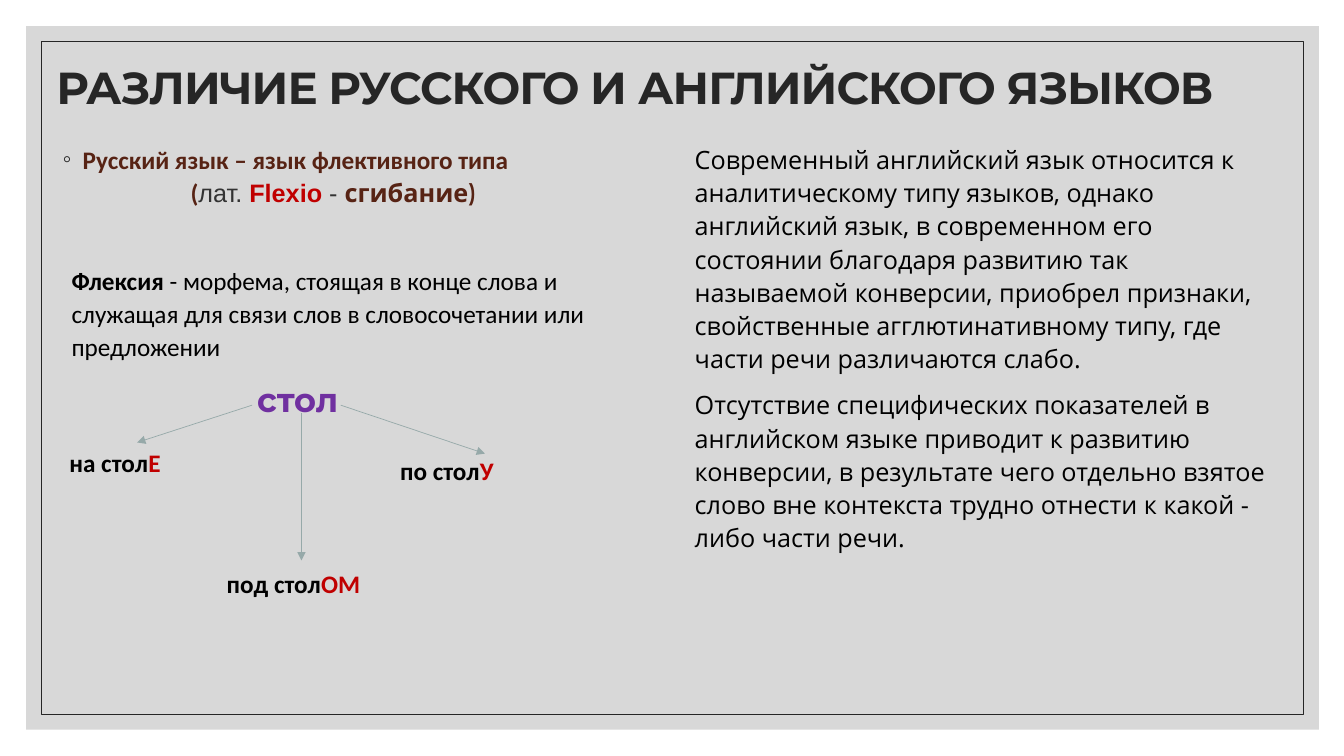
from pptx import Presentation
from pptx.dml.color import RGBColor
from pptx.enum.shapes import MSO_CONNECTOR as CONN, MSO_SHAPE as SHAPE
from pptx.enum.text import MSO_ANCHOR as ANCHOR, MSO_AUTO_SIZE as FIT, PP_ALIGN as ALIGN
from pptx.oxml.ns import qn
from pptx.util import Emu, Pt
from lxml.etree import SubElement

PX = 9144
DARK, BROWN, RED, BLACK, GREY = "262626", "572314", "C00000", "000000", "333333"


def px(*lengths):
    return [Emu(n * PX) for n in lengths]


def rgb(code):
    return RGBColor.from_string(code)


class SlideBuilder:
    """Holds the slide and its text and line style."""

    def __init__(self, prs, size=18, spacing=1.1, accent="96A9A9"):
        self.s = prs.slides.add_slide(prs.slide_layouts[3])
        self.size, self.spacing, self.accent = size, spacing, accent
        self.backdrops = 0

    def backdrop(self, box, fill=None, alpha=100, line=None):
        sp = self.s.shapes.add_shape(SHAPE.RECTANGLE, *px(*box))
        sp.shadow.inherit = False
        if fill:
            sp.fill.solid()
            sp.fill.fore_color.rgb = rgb(fill)
            color = sp.fill._xPr.find(".//" + qn("a:srgbClr"))
            SubElement(color, qn("a:alpha"), val=str(alpha * 1000))
        else:
            sp.fill.background()
        if line:
            sp.line.color.rgb = rgb(line)
            sp.line.width = Pt(0.5)
        else:
            sp.line.fill.background()
        sp._element.getparent().insert(2 + self.backdrops, sp._element)
        self.backdrops += 1

    def placeholder(self, idx, box, anchor=ANCHOR.TOP):
        sp = self.s.placeholders[idx]
        sp.left, sp.top, sp.width, sp.height = px(*box)
        tf = sp.text_frame
        tf.word_wrap, tf.auto_size, tf.vertical_anchor = True, FIT.NONE, anchor
        return tf

    def runs(self, p, runs):
        for text, font, color, bold, *size in runs:
            r = p.add_run()
            r.text = text
            r.font.name, r.font.bold = font, bold
            r.font.size = Pt(size[0] if size else self.size)
            r.font.color.rgb = rgb(color)

    def title(self, text, box):
        p = self.placeholder(0, box, ANCHOR.MIDDLE).paragraphs[0]
        p.alignment, p.line_spacing = ALIGN.LEFT, 0.9
        self.runs(p, [(text, "Montserrat", DARK, True, 32)])
        p.runs[0].font._element.set("spc", "-70")

    def body(self, idx, box, paragraphs):
        tf = self.placeholder(idx, box)
        for i, (before, margin, bullet, runs) in enumerate(paragraphs):
            p = tf.add_paragraph() if i else tf.paragraphs[0]
            p.alignment, p.line_spacing = ALIGN.LEFT, self.spacing
            p.space_before, p.space_after = Pt(before), Pt(0)
            pPr = p._p.get_or_add_pPr()
            pPr.set("marL", str(margin * PX))
            pPr.set("indent", str(-margin * PX if bullet else 0))
            if bullet:
                SubElement(SubElement(pPr, qn("a:buClr")), qn("a:srgbClr"), val=DARK)
                SubElement(pPr, qn("a:buChar"), char=bullet)
            else:
                SubElement(pPr, qn("a:buNone"))
            self.runs(p, runs)

    def label(self, box, runs):
        tf = self.s.shapes.add_textbox(*px(*box)).text_frame
        tf.word_wrap, tf.auto_size = True, FIT.SHAPE_TO_FIT_TEXT
        self.runs(tf.paragraphs[0], runs)

    def arrow(self, start, end):
        c = self.s.shapes.add_connector(CONN.STRAIGHT, *px(*start, *end))
        c.line.color.rgb = rgb(self.accent)
        c.line.width = Pt(0.5)
        SubElement(c.line._get_or_add_ln(), qn("a:tailEnd"), type="triangle")
        SubElement(c._element.spPr, qn("a:effectLst"))


def main():
    prs = Presentation()
    prs.slide_width, prs.slide_height = px(1333, 750)
    b = SlideBuilder(prs)

    b.backdrop((26, 26, 1282, 698), fill="BFBFBF", alpha=60)
    b.backdrop((41, 41, 1252, 668), line=DARK)
    b.title("РАЗЛИЧИЕ РУССКОГО И АНГЛИЙСКОГО ЯЗЫКОВ", (46, 35, 1240, 109))

    b.body(1, (52, 135, 579, 505), [
        (9, 20, "◦", [("Русский язык – язык флективного типа", "Calibri", BROWN, True)]),
        (0, 127, None, [
            ("(", "Calibri", BROWN, True),
            ("лат. ", "Arial", GREY, False),
            ("Flexio ", "Arial", RED, True),
            ("- ", "Arial", GREY, False),
            ("сгибание)", "Cabin", BROWN, True),
        ]),
        (39, 9, None, [
            ("Флексия", "Calibri", BLACK, True),
            (" - морфема, стоящая в конце слова и служащая для связи слов "
             "в словосочетании или предложении", "Calibri", BLACK, False),
        ]),
        (9, 193, None, [("стол", "Montserrat", "7030A0", True, 24)]),
    ])

    english = [
        "Современный английский язык относится к аналитическому типу языков, "
        "однако английский язык, в современном его состоянии благодаря развитию "
        "так называемой конверсии, приобрел признаки, свойственные "
        "агглютинативному типу, где части речи различаются слабо.",
        "Отсутствие специфических показателей в английском языке приводит к "
        "развитию конверсии, в результате чего отдельно взятое слово вне "
        "контекста трудно отнести к какой - либо части речи.",
    ]
    b.body(2, (679, 135, 596, 505),
           [(9, 0, None, [(text, "Open Sans", BLACK, False)]) for text in english])

    for start, end in [((250, 402), (136, 439)),
                       ((299, 410), (299, 556)),
                       ((338, 402), (481, 450))]:
        b.arrow(start, end)

    for box, stem, ending in [((59, 439, 176, 40), "на стол", "Е"),
                              ((215, 559, 212, 40), "под стол", "ОМ"),
                              ((387, 447, 190, 40), "по стол", "У")]:
        b.label(box, [(stem, "Calibri", BLACK, True), (ending, "Calibri", RED, True)])

    prs.save("out.pptx")


if __name__ == "__main__":
    main()
